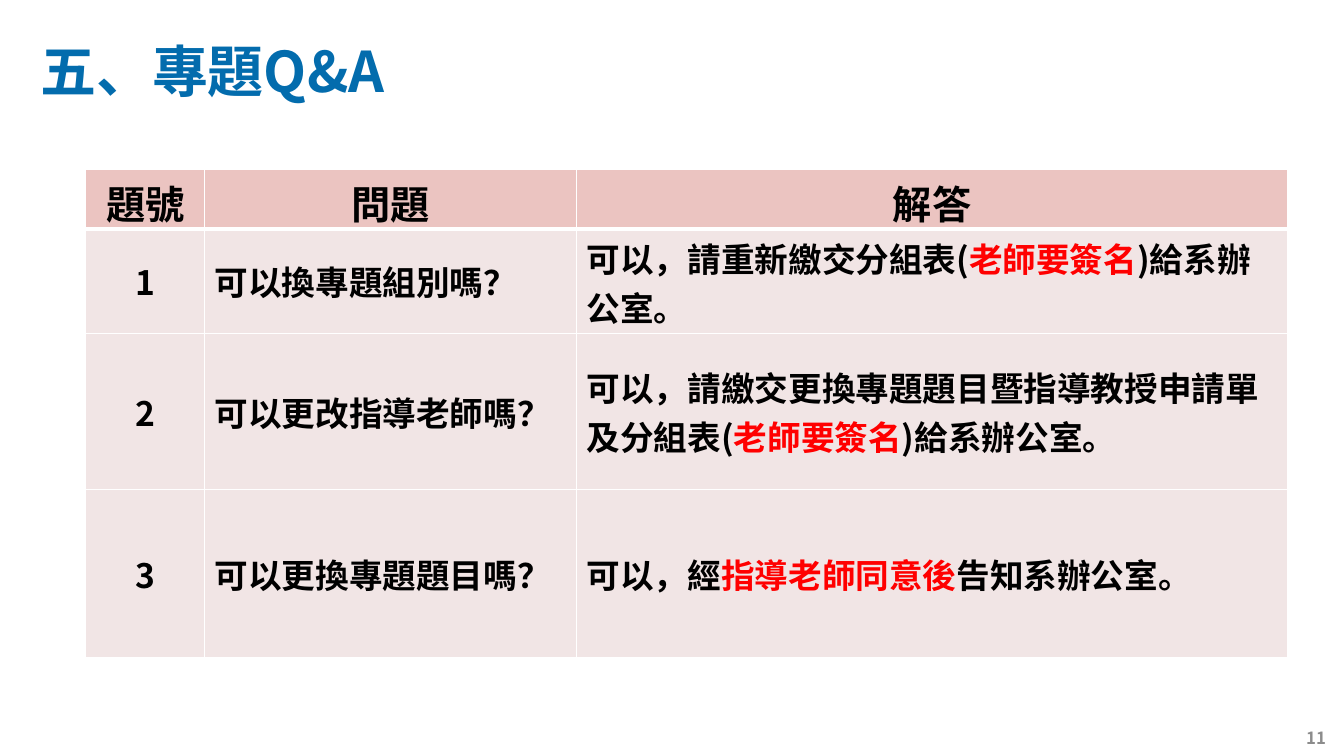
from pptx import Presentation
from pptx.dml.color import RGBColor
from pptx.enum.text import MSO_ANCHOR, PP_ALIGN
from pptx.oxml.ns import qn
from pptx.util import Inches, Pt
from lxml.etree import SubElement

FONT = "Noto Sans CJK SC"
COLORS = {"title": "036CAD", "page": "8C8C8C", "text": "000000", "mark": "FF0000",
          "head": "EBC4C1", "body": "F1E5E5", "rule": "FFFFFF"}
COLS = [1.18, 3.69, 7.05]
ROWS = [0.59, 1.04, 1.55, 1.66]
HEADS = ["題號", "問題", "解答"]
# Each answer is split in plain, marked and plain text.
ITEMS = [
    ("可以換專題組別嗎？", ["可以，請重新繳交分組表(", "老師要簽名", ")給系辦公室。"]),
    ("可以更改指導老師嗎？",
     ["可以，請繳交更換專題題目暨指導教授申請單及分組表(", "老師要簽名", ")給系辦公室。"]),
    ("可以更換專題題目嗎？", ["可以，經", "指導老師同意後", "告知系辦公室。"]),
]


def color(name):
    return RGBColor.from_string(COLORS[name])


def write(frame, parts, size, tone, align=PP_ALIGN.LEFT):
    """Fill the first paragraph; every second part is marked."""
    para = frame.paragraphs[0]
    para.alignment = align
    font = para.font
    font.name, font.size, font.bold = FONT, Pt(size), True
    font.color.rgb = color(tone)
    base = para._p.pPr.find(qn("a:defRPr"))
    SubElement(base, qn("a:ea")).set("typeface", FONT)
    for i, part in enumerate(parts):
        run = para.add_run()
        run.text = part
        if i % 2:
            run.font.color.rgb = color("mark")
    return para


def add_text(slide, box, parts, size, tone, align=PP_ALIGN.LEFT):
    frame = slide.shapes.add_textbox(*map(Inches, box)).text_frame
    frame.word_wrap = True
    return frame, write(frame, parts, size, tone, align)


def add_title(slide, box):
    _, para = add_text(slide, box, ["五、專題Q&A"], 40, "title")
    para.line_spacing = 1.5


def add_page(slide, box):
    frame, _ = add_text(slide, box, ["11"], 12, "page", PP_ALIGN.RIGHT)
    frame.vertical_anchor = MSO_ANCHOR.MIDDLE


def add_rules(cell, top, bottom):
    """Draw the four borders, with the given widths above and below."""
    props = cell._tc.get_or_add_tcPr()
    for side, width in zip("LRTB", [1, 1, top, bottom]):
        line = SubElement(props, qn(f"a:ln{side}"), w=str(Pt(width)))
        fill = SubElement(line, qn("a:solidFill"))
        SubElement(fill, qn("a:srgbClr"), val=COLORS["rule"])


def add_grid(slide, box):
    rows = [[[head] for head in HEADS]]
    rows += [[[str(n)], [ask], reply] for n, (ask, reply) in enumerate(ITEMS, 1)]
    table = slide.shapes.add_table(len(ROWS), len(COLS), *map(Inches, box)).table
    for col, width in zip(table.columns, COLS):
        col.width = Inches(width)
    for r, (row, height) in enumerate(zip(rows, ROWS)):
        table.rows[r].height = Inches(height)
        head = r == 0
        for c, parts in enumerate(row):
            cell = table.cell(r, c)
            cell.vertical_anchor = MSO_ANCHOR.MIDDLE
            add_rules(cell, 3 if r == 1 else 1, 3 if head else 1)
            cell.fill.solid()
            cell.fill.fore_color.rgb = color("head" if head else "body")
            align = PP_ALIGN.CENTER if head or c == 0 else PP_ALIGN.LEFT
            write(cell.text_frame, parts, 28 if head else 24, "text", align)


def main():
    deck = Presentation()
    deck.slide_width, deck.slide_height = Inches(13.33), Inches(7.5)
    slide = deck.slides.add_slide(deck.slide_layouts[6])
    add_title(slide, (0.3, -0.02, 4.1, 1.11))
    add_page(slide, (10.25, 7.12, 3, 0.4))
    add_grid(slide, (0.85, 1.68, sum(COLS), sum(ROWS)))
    deck.save("out.pptx")


if __name__ == "__main__":
    main()
